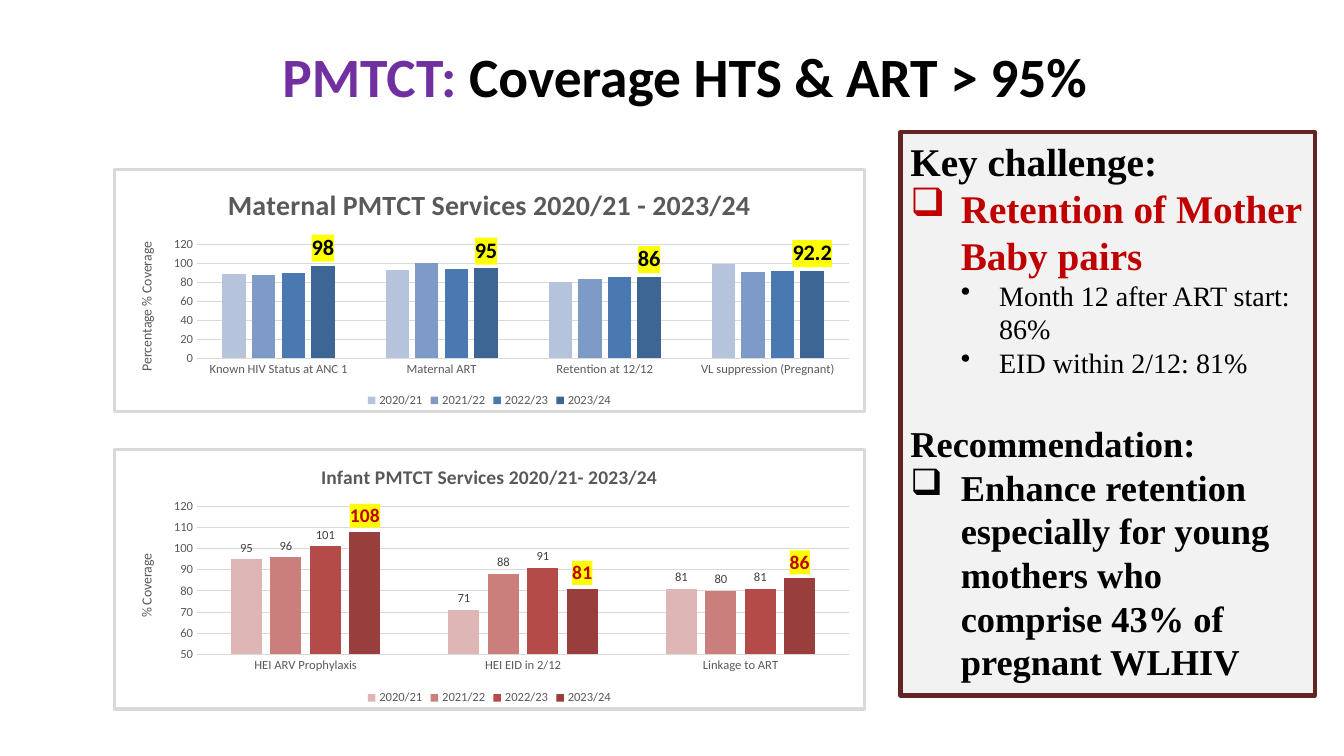
from lxml.etree import fromstring
from pptx import Presentation
from pptx.chart.data import CategoryChartData as Data
from pptx.dml.color import RGBColor as RGB
from pptx.enum.chart import XL_CHART_TYPE as Kind, XL_LABEL_POSITION as Pos
from pptx.enum.chart import XL_LEGEND_POSITION as Side, XL_TICK_MARK as Tick
from pptx.enum.shapes import MSO_SHAPE as Form
from pptx.enum.text import MSO_ANCHOR as Anchor, MSO_AUTO_SIZE as Fit, PP_ALIGN as Align
from pptx.oxml import parse_xml
from pptx.oxml.ns import nsdecls, qn
from pptx.util import Inches, Pt

HUES = {
    "ink": "000000", "gray": "595959", "soft": "404040", "rule": "D9D9D9",
    "violet": "7030A0", "red": "C00000", "wine": "632523", "pale": "F2F2F2",
    "mark": "FFFF00",
}
BLUES = ["B6C3DC", "7E9BC8", "4A79B1", "3E6695"]
REDS = ["DDB6B5", "CA7F7D", "B44B48", "983F3D"]
YEARS = ["2020/21", "2021/22", "2022/23", "2023/24"]


class Deck:
    """Draw styled elements on one slide with a grid of 100 columns and 100 rows."""

    def __init__(self):
        self.prs = Presentation()
        self.prs.slide_width, self.prs.slide_height = Inches(13.33), Inches(7.5)
        self.slide = self.prs.slides.add_slide(self.prs.slide_layouts[5])

    def grid(self, x, y, w, h):
        col, row = self.prs.slide_width / 100, self.prs.slide_height / 100
        return [int(v) for v in (x * col, y * row, w * col, h * row)]

    def put(self, item, **fmt):
        for key, val in fmt.items():
            if key == "color":
                item.color.rgb = RGB.from_string(HUES[val])
            else:
                setattr(item, key, val)

    def font(self, item, size, color, bold=False, name="Calibri"):
        self.put(item, size=Pt(size), color=color, bold=bold, name=name)

    def paint(self, fill, hue):
        fill.solid()
        fill.fore_color.rgb = RGB.from_string(hue)

    def title(self, spot, parts):
        head = self.slide.shapes.title
        left, top, width, height = self.grid(*spot)
        self.put(head, left=left, top=top, width=width, height=height)
        self.put(head.text_frame, word_wrap=True, auto_size=Fit.NONE,
                 vertical_anchor=Anchor.MIDDLE)
        para = head.text_frame.paragraphs[0]
        para.alignment = Align.CENTER
        for text, color in parts:
            run = para.add_run()
            run.text = text
            self.font(run.font, 39.6, color, True)

    def panel(self, spot, lines):
        box = self.slide.shapes.add_shape(Form.RECTANGLE, *self.grid(*spot))
        box.shadow.inherit = False
        self.paint(box.fill, HUES["pale"])
        self.put(box.line, color="wine", width=Pt(3))
        frame = box.text_frame
        self.put(frame, word_wrap=True, auto_size=Fit.SHAPE_TO_FIT_TEXT,
                 vertical_anchor=Anchor.TOP)
        for i, (text, size, color, bold, mark, gap) in enumerate(lines):
            para = frame.add_paragraph() if i else frame.paragraphs[0]
            self.put(para, alignment=Align.LEFT)
            if gap:
                para.space_before = Pt(gap)
            if mark:
                self.bullet(para, mark)
            run = para.add_run()
            run.text = text
            self.font(run.font, size, color, bold, "Times New Roman")

    def bullet(self, para, mark):
        deep = mark == "•"
        left, hang = (0.88, 0.38) if deep else (0.5, 0.5)
        para.level = int(deep)
        prop = para._p.get_or_add_pPr()
        prop.set("marL", str(Inches(left)))
        prop.set("indent", str(-Inches(hang)))
        prop.append(parse_xml(f'<a:buChar {nsdecls("a")} char="{mark}"/>'))

    def chart(self, spot, head, size, unit, cats, rows, hues, span, area, labels):
        data = Data()
        data.categories = cats
        for year, vals in zip(YEARS, rows):
            data.add_series(year, vals)
        chart = self.slide.shapes.add_chart(
            Kind.COLUMN_CLUSTERED, *self.grid(*spot), data).chart
        self.font(chart.font, 10, "ink")
        self.caption(chart, head, size, True)
        self.put(chart, has_legend=True)
        self.put(chart.legend, position=Side.BOTTOM, include_in_layout=False)
        self.font(chart.legend.font, 9, "gray")
        self.axes(chart, unit, span)
        self.frame(chart, area)
        plot = chart.plots[0]
        self.put(plot, gap_width=219, overlap=-27, vary_by_categories=False)
        for bars, hue, label in zip(plot.series, hues, labels):
            self.paint(bars.format.fill, hue)
            if label:
                self.label(bars.data_labels, *label)

    def caption(self, item, text, size, bold):
        item.has_title = True
        name = item.chart_title if hasattr(item, "chart_title") else item.axis_title
        run = name.text_frame.paragraphs[0].add_run()
        run.text = text
        self.font(run.font, size, "gray", bold)

    def axes(self, chart, unit, span):
        low, high, step = span
        base, side = chart.category_axis, chart.value_axis
        for axis in (base, side):
            self.put(axis, major_tick_mark=Tick.NONE, minor_tick_mark=Tick.NONE)
            self.font(axis.tick_labels.font, 9, "gray")
        self.put(side, minimum_scale=low, maximum_scale=high, major_unit=step)
        self.caption(side, unit, 10, False)
        side.format.line.fill.background()
        for line in (base.format.line, side.major_gridlines.format.line):
            self.put(line, color="rule", width=Pt(0.75))

    def frame(self, chart, area):
        space = chart._chartSpace
        rim = (f'<c:spPr {nsdecls("c", "a")}><a:solidFill><a:srgbClr val="FFFFFF"/>'
               f'</a:solidFill><a:ln w="{Pt(2.25)}"><a:solidFill>'
               f'<a:srgbClr val="{HUES["rule"]}"/></a:solidFill></a:ln></c:spPr>')
        space.find(qn("c:txPr")).addprevious(parse_xml(rim))
        plot = space.find(".//" + qn("c:plotArea"))
        for old in plot.findall(qn("c:layout")):
            plot.remove(old)
        modes = '<c:xMode val="edge"/><c:yMode val="edge"/>'
        sizes = "".join(f'<c:{k} val="{v}"/>' for k, v in zip("xywh", area))
        plot.insert(0, fromstring(
            f'<c:layout {nsdecls("c")}><c:manualLayout><c:layoutTarget val="inner"/>'
            f'{modes}{sizes}</c:manualLayout></c:layout>'))

    def label(self, tags, size, color, lit):
        self.put(tags, show_value=True, position=Pos.OUTSIDE_END)
        self.font(tags.font, size, color, lit)
        if lit:
            tags._element.find(qn("c:txPr")).addprevious(parse_xml(
                f'<c:spPr {nsdecls("c", "a")}><a:solidFill>'
                f'<a:srgbClr val="{HUES["mark"]}"/></a:solidFill></c:spPr>'))


def main():
    deck = Deck()
    deck.title((20.1, 4.27, 62.64, 11.33),
               [("PMTCT: ", "violet"), ("Coverage HTS & ART > 95% ", "ink")])
    deck.panel((67, 17.47, 30.83, 74.53), [
        ("Key challenge:", 28, "ink", True, None, 0),
        ("Retention of Mother Baby pairs", 28, "red", True, "❑", 0),
        ("Month 12 after ART start: 86%", 20, "ink", False, "•", 0),
        ("EID within 2/12: 81%", 20, "ink", False, "•", 0),
        ("Recommendation:", 26, "ink", True, None, 30),
        ("Enhance retention especially for young mothers who comprise 43% of "
         "pregnant WLHIV", 26, "ink", True, "❑", 0),
    ])
    deck.chart((8.4, 22.27, 56.03, 32.4), "Maternal PMTCT Services 2020/21 - 2023/24", 20,
               "Percentage % Coverage",
               ["Known HIV Status at ANC 1", "Maternal ART", "Retention at 12/12",
                "VL suppression (Pregnant)"],
               [(89, 93, 81, 100), (88, 101, 84, 91), (90, 94, 86, 92), (98, 95, 86, 92.2)],
               BLUES, (0, 120, 20), (0.11, 0.31, 0.87, 0.47),
               [None] * 3 + [(16, "ink", True)])
    deck.chart((8.4, 59.2, 56.03, 34.8), "Infant PMTCT Services 2020/21- 2023/24", 14,
               "% Coverage", ["HEI ARV Prophylaxis", "HEI EID in 2/12", "Linkage to ART"],
               [(95, 71, 81), (96, 88, 80), (101, 91, 81), (108, 81, 86)],
               REDS, (50, 120, 10), (0.11, 0.22, 0.87, 0.57),
               [(9, "soft", False)] * 3 + [(14, "red", True)])
    deck.prs.save("out.pptx")


if __name__ == "__main__":
    main()
